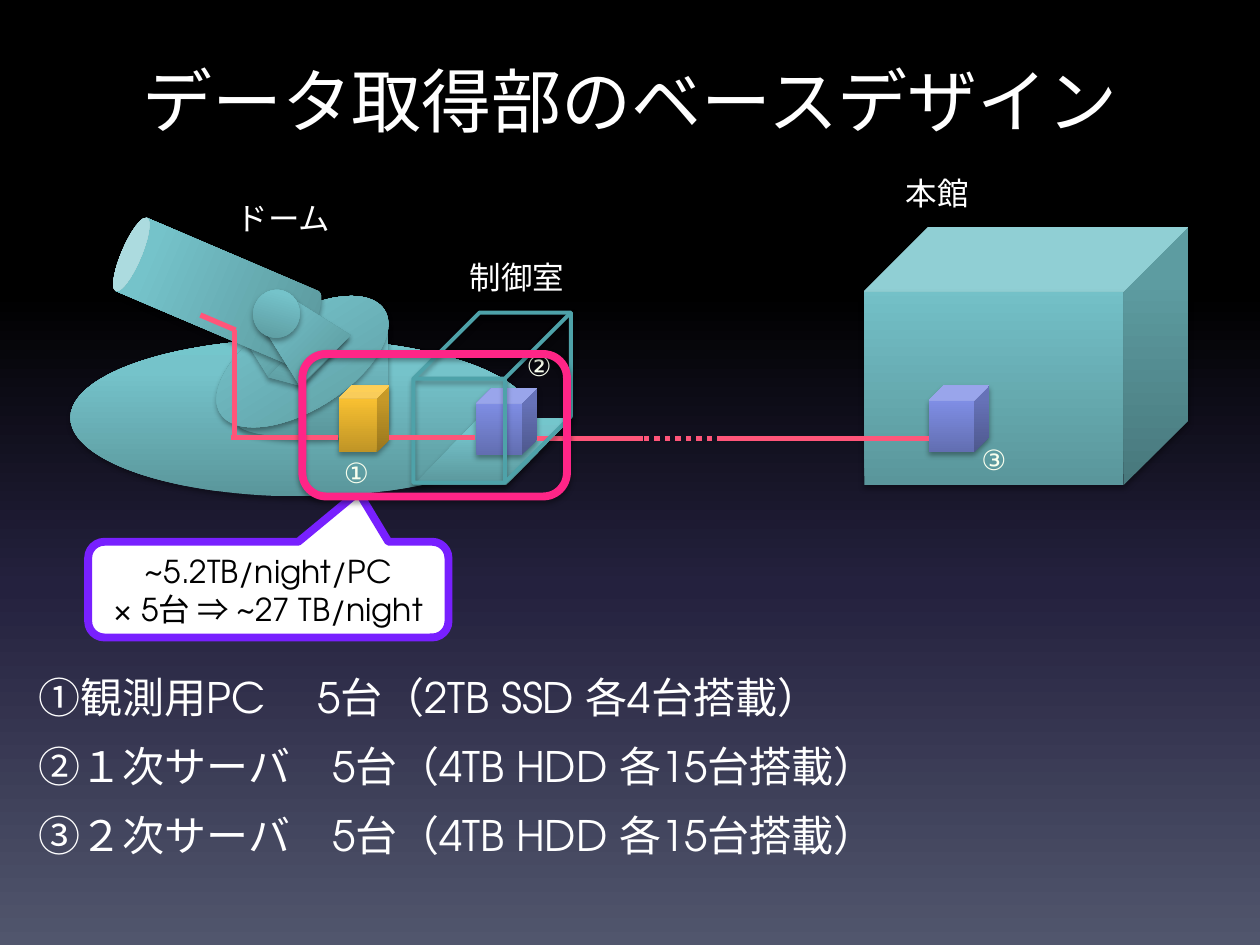
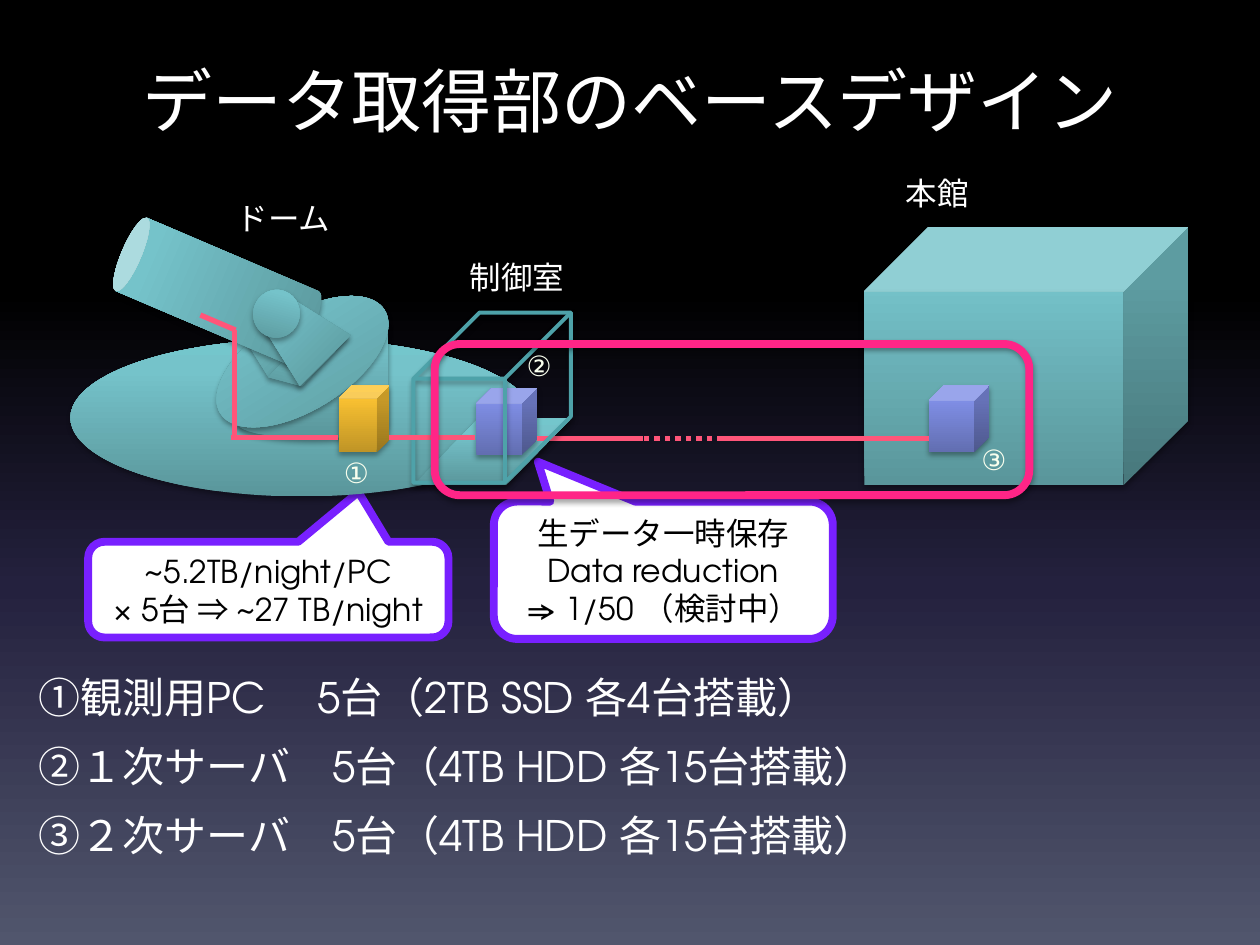
import pptx
import pptx.util
import pptx.dml.color
import pptx.enum.dml
import pptx.enum.lang
import pptx.enum.shapes
import pptx.enum.text
import pptx.oxml
import pptx.oxml.ns
from lxml import etree

Pt = pptx.util.Pt
qn = pptx.oxml.ns.qn
SHAPE = pptx.enum.shapes.MSO_SHAPE
ALIGN = pptx.enum.text.PP_ALIGN
ANCHOR = pptx.enum.text.MSO_ANCHOR
FONT = "TeX Gyre Adventor"

COLORS = {
    "white": "FFFFFF", "black": "000000", "label": "F9FFEE",
    "cable": "FF5579", "focus": "FF2587", "callout": "7820FF", "frame": "4EA2A9",
}
GRADIENTS = {
    "night": [(0, "000000"), (31, "000000"), (62, "24213E"), (100, "51566D")],
    "teal": [(0, "5A969B"), (80, "75C3CA"), (100, "74C6CC")],
    "gold": [(0, "BF9426"), (80, "F8C031"), (100, "FDC32D")],
    "violet": [(0, "626EB1"), (80, "808FE6"), (100, "7E8EE9")],
}
TITLE = "データ取得部のベースデザイン"
EQUIPMENT = [
    "①観測用PC\u3000 5台（2TB SSD 各4台搭載）",
    "②１次サーバ\u30005台（4TB HDD 各15台搭載）",
    "③２次サーバ\u30005台（4TB HDD 各15台搭載）",
]
DATA_RATE = ["~5.2TB/night/PC", "× 5台 ⇒ ~27 TB/night"]
REDUCTION = ["生データ一時保存", "Data reduction", "⇒ 1/50 （検討中）"]
SERVER = (34.6, 38.2)


def rgb(name):
    return pptx.dml.color.RGBColor.from_string(COLORS[name])


def pts(*values):
    return [Pt(v) for v in values]


def set_gradient(fill, element, name, angle):
    fill.gradient()
    fill.gradient_angle = angle
    stops = element.find(".//" + qn("a:gsLst"))
    for stop in list(stops):
        stops.remove(stop)
    for pos, color in GRADIENTS[name]:
        gs = etree.SubElement(stops, qn("a:gs"), pos=str(pos * 1000))
        etree.SubElement(gs, qn("a:srgbClr"), val=color)


def add_shadow(sp):
    sp._element.spPr.append(pptx.oxml.parse_xml(
        f'<a:effectLst {pptx.oxml.ns.nsdecls("a")}>'
        f'<a:outerShdw blurRad="{Pt(3.1)}" dist="{Pt(1.8)}" dir="5400000" rotWithShape="0">'
        '<a:srgbClr val="000000"><a:alpha val="35000"/></a:srgbClr>'
        '</a:outerShdw></a:effectLst>'))


def write(tf, lines, size=18, color="white", align=ALIGN.LEFT, anchor=ANCHOR.TOP,
          wrap=True, spacing=None, before=0):
    tf.word_wrap = wrap
    tf.vertical_anchor = anchor
    for i, text in enumerate(lines):
        p = tf.paragraphs[0] if i == 0 else tf.add_paragraph()
        p.alignment = align
        p.space_before = Pt(before)
        if spacing:
            p.line_spacing = spacing
        r = p.add_run()
        r.text = text
        r.font.name = FONT
        r.font.size = Pt(size)
        r.font.color.rgb = rgb(color)
        r.font.language_id = pptx.enum.lang.MSO_LANGUAGE_ID.JAPANESE


def add_part(s, kind, x, y, w, h, gradient=None, line=None, weight=0,
             rotation=0, adjust=(), shadow=True):
    sp = s.shapes.add_shape(kind, *pts(x, y, w, h))
    sp.rotation = rotation
    for i, value in enumerate(adjust):
        sp.adjustments[i] = value
    if gradient:
        set_gradient(sp.fill, sp._element, gradient, 90)
    else:
        sp.fill.background()
    if line:
        sp.line.color.rgb = rgb(line)
        sp.line.width = Pt(weight)
    else:
        sp.line.fill.background()
    if shadow:
        add_shadow(sp)
    else:
        sp.shadow.inherit = False
    return sp


def add_label(s, text, x, y, w=69, h=29, **fmt):
    sp = s.shapes.add_textbox(*pts(x, y, w, h))
    write(sp.text_frame, [text], wrap=False, **fmt)


def add_number(s, text, x, y):
    add_label(s, text, x, y, 34.6, 30, size=16, color="label")


def add_cable(s, x1, y1, x2, y2, dotted=False):
    c = s.shapes.add_connector(pptx.enum.shapes.MSO_CONNECTOR.STRAIGHT, *pts(x1, y1, x2, y2))
    c.line.color.rgb = rgb("cable")
    c.line.width = Pt(3)
    if dotted:
        c.line.dash_style = pptx.enum.dml.MSO_LINE.ROUND_DOT
    etree.SubElement(c._element.spPr, qn("a:effectLst"))


def add_dome(s, x, y):
    parts = [
        (SHAPE.OVAL, 0.3, 86.7, 264.2, 90, 0, ()),
        (SHAPE.CAN, 95.4, 71.6, 86.4, 72, 0, ()),
        (SHAPE.OVAL, 77.4, 72.3, 110.9, 54.7, 327.8, ()),
        (SHAPE.TRAPEZOID, 91.8, 56.4, 41, 43.9, 315, ()),
        (SHAPE.PARALLELOGRAM, 117, 79.5, 38.9, 34.6, 15, (0.55,)),
        (SHAPE.CAN, 61.5, 0.3, 45.4, 118.1, 293.1, ()),
        (SHAPE.TRAPEZOID, 109.8, 61.5, 41, 43.9, 315, ()),
        (SHAPE.OVAL, 104.7, 58.6, 26.6, 27.4, 15, ()),
    ]
    for kind, dx, dy, w, h, rotation, adjust in parts:
        add_part(s, kind, x + dx, y + dy, w, h, "teal", rotation=rotation, adjust=adjust)
    add_part(s, SHAPE.CUBE, x + 153.7, y + 113.3, 28.8, 38.2, "gold")
    add_label(s, "ドーム", x + 88.2, y + 3.2)
    add_number(s, "①", x + 149.4, y + 150)


def add_dome_cable(s, x, y):
    for x1, y1, x2, y2 in [(74.5, 73, 94.6, 81.6), (93.9, 81.6, 93.9, 142.8),
                           (91.8, 142.8, 153, 142.8), (182.5, 142.8, 231.4, 142.8)]:
        add_cable(s, x + x1, y + y1, x + x2, y + y2)


def add_hall(s, x, y, w, h):
    add_part(s, SHAPE.CUBE, x, y, w, h, "teal")
    add_part(s, SHAPE.CUBE, x + 36.7, y + 90.7, *SERVER, "violet")
    add_label(s, "本館", x + 16.6, y - 33.8, 51)
    add_number(s, "③", x + 59.8, y + 119.5)


def add_room_inside(s, x, y, w, h):
    add_part(s, SHAPE.PARALLELOGRAM, x, y + h - 36.7, w, 38.2, "teal", adjust=[0.97])
    add_part(s, SHAPE.CUBE, x + 36, y + 43.2, *SERVER, "violet")


def add_room_frame(s, x, y, w, h):
    add_part(s, SHAPE.CUBE, x, y, w, h, line="frame", weight=2.25, adjust=[0.42])
    add_label(s, "制御室", x + 25.2, y - 34.6)
    add_number(s, "②", x + 57.6, y + 17.2)


def add_link(s, x, y, w):
    add_cable(s, x, y, x + 60.5, y)
    add_cable(s, x + 103.7, y, x + w, y)
    add_cable(s, x + 43.2, y, x + 113.8, y, dotted=True)


def add_diagram(s, x, y):
    dome = (x, y)
    room = (x + 196.2, y + 71.6, 90, 97.2)
    add_dome(s, *dome)
    add_hall(s, x + 453.9, y + 22.6, 185, 147.6)
    add_room_inside(s, *room)
    add_link(s, x + 266.7, y + 143.6, 223.9)
    add_room_frame(s, *room)
    add_dome_cable(s, *dome)


def add_callout(s, lines, box, pointer):
    sp = add_part(s, SHAPE.ROUNDED_RECTANGULAR_CALLOUT, *box, line="callout", weight=4.5,
                  adjust=[*pointer, 0.17], shadow=False)
    sp.fill.solid()
    sp.fill.fore_color.rgb = rgb("white")
    write(sp.text_frame, lines, color="black", align=ALIGN.CENTER, anchor=ANCHOR.MIDDLE)


def add_title(s, x, y, w, h):
    sp = s.shapes.title
    sp.left, sp.top, sp.width, sp.height = pts(x, y, w, h)
    write(sp.text_frame, [TITLE], size=40, align=ALIGN.CENTER, anchor=ANCHOR.MIDDLE)


def add_equipment(s, x, y, w, h):
    sp = s.shapes.add_textbox(*pts(x, y, w, h))
    write(sp.text_frame, EQUIPMENT, size=24, spacing=1.2, before=4.8)


def add_design_slide(prs, focus, reduction=False):
    s = prs.slides.add_slide(prs.slide_layouts[5])
    add_title(s, 36, 27.4, 648, 59)
    add_equipment(s, 15, 374.4, 648, 139)
    if reduction:
        add_callout(s, REDUCTION, (282.2, 286.6, 193.7, 78.5), (-0.37, -0.79))
    add_callout(s, DATA_RATE, (50.4, 309.6, 205.9, 54.7), (0.25, -1.02))
    add_diagram(s, 40, 107)
    add_part(s, SHAPE.ROUNDED_RECTANGLE, *focus, line="focus", weight=4.5)


def main():
    prs = pptx.Presentation()
    prs.slide_width, prs.slide_height = pts(720, 540)
    master = prs.slide_master
    set_gradient(master.background.fill, master._element, "night", 270)
    add_design_slide(prs, (172.8, 202.3, 151.2, 81.4))
    add_design_slide(prs, (248.4, 196.6, 339.8, 86.4), reduction=True)
    prs.save("out.pptx")


if __name__ == "__main__":
    main()
